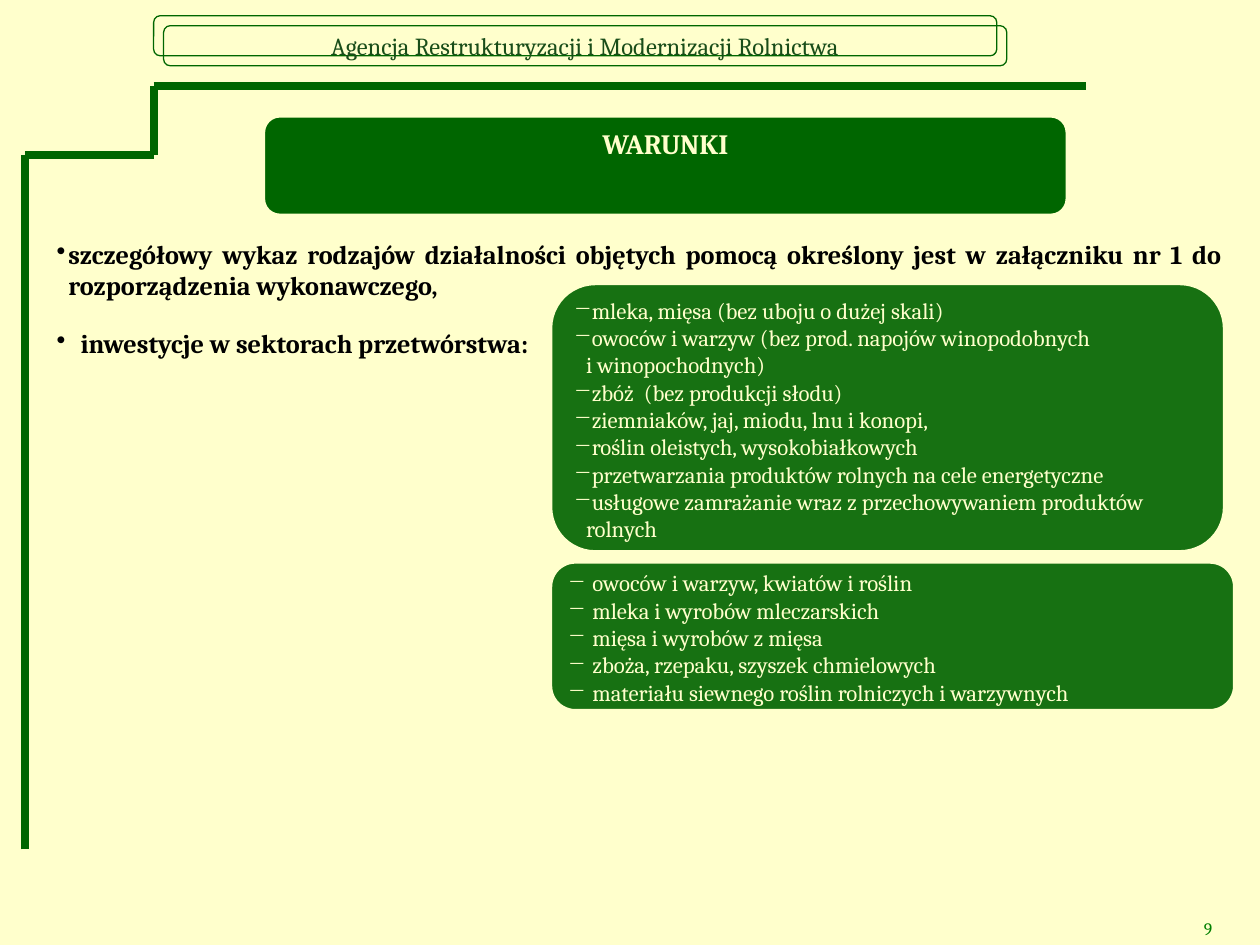
from lxml import etree
from pptx import Presentation
from pptx.dml.color import RGBColor
from pptx.enum.shapes import MSO_CONNECTOR as CONN, MSO_SHAPE as SHAPE
from pptx.enum.text import MSO_ANCHOR as ANCHOR, PP_ALIGN as ALIGN
from pptx.oxml.ns import qn
from pptx.util import Pt

GREEN, CREAM = "006600", "FFFFCC"


def rgb(value):
    return RGBColor.from_string(value)


def add_text(p, text, size, color, bold=False, align=ALIGN.LEFT, bullet=None, margin=0, hang=0):
    """Fill a paragraph; margin and hang (the bullet's outdent) are in points."""
    p.alignment = align
    pPr = p._p.get_or_add_pPr()
    pPr.set("marL", str(Pt(margin)))
    pPr.set("indent", str(Pt(-hang)))
    if bullet:
        etree.SubElement(pPr, qn("a:buChar")).set("char", bullet)
    for i, line in enumerate(text.split("\n")):
        if i:
            p.add_line_break()
        r = p.add_run()
        r.text = line
        r.font.name, r.font.size, r.font.bold = "Cambria", Pt(size), bold
        r.font.color.rgb = rgb(color)


prs = Presentation()
prs.slide_width, prs.slide_height = Pt(720), Pt(540)
s = prs.slides.add_slide(prs.slide_layouts[6])
s.background.fill.solid()
s.background.fill.fore_color.rgb = rgb(CREAM)

# Stepped frame line
frame = [(14.4, 485.3), (14.4, 88.6), (87.8, 88.6), (87.8, 49), (620.6, 49)]
for start, end in zip(frame, frame[1:]):
    line = s.shapes.add_connector(CONN.STRAIGHT, *map(Pt, start + end))
    line.line.color.rgb = rgb(GREEN)
    line.line.width = Pt(4.5)
    etree.SubElement(line._element.spPr, qn("a:effectLst"))

# Header with a doubled outline
for x, y in [(87.8, 9), (93.5, 14.7)]:
    sp = s.shapes.add_shape(SHAPE.ROUNDED_RECTANGLE, Pt(x), Pt(y), Pt(481.8), Pt(22.9))
    sp.shadow.inherit = False
    sp.fill.background()
    sp.line.color.rgb = rgb(GREEN)
    sp.line.width = Pt(0.75)
tf = sp.text_frame
tf.word_wrap = False
tf.vertical_anchor = ANCHOR.MIDDLE
add_text(tf.paragraphs[0], "Agencja Restrukturyzacji i Modernizacji Rolnictwa", 14, "194D19",
         align=ALIGN.CENTER)

# Conditions
tf = s.shapes.add_textbox(Pt(25.2), Pt(111), Pt(680.4), Pt(279)).text_frame
tf.word_wrap = True
tf.margin_top, tf.margin_bottom = Pt(25), 0
conditions = [
    ("szczegółowy wykaz rodzajów działalności objętych pomocą określony jest "
     "w załączniku nr 1 do rozporządzenia wykonawczego,", 6.75),
    ("inwestycje w sektorach przetwórstwa:", 13.75),
]
for i, (text, indent) in enumerate(conditions):
    p = tf.add_paragraph() if i else tf.paragraphs[0]
    add_text(p, text, 15, "000000", True, ALIGN.JUSTIFY, "•", indent, indent)
tf.paragraphs[0].space_after = Pt(3)
tf.paragraphs[1].space_before = Pt(12)

# Sector panels: top, width, height, text indent, items
panels = [
    (162, 385.2, 153.4, 7, [
        "mleka, mięsa (bez uboju o dużej skali)",
        "owoców i warzyw (bez prod. napojów winopodobnych\ni winopochodnych)",
        "zbóż  (bez produkcji słodu)",
        "ziemniaków, jaj, miodu, lnu i konopi,",
        "roślin oleistych, wysokobiałkowych",
        "przetwarzania produktów rolnych na cele energetyczne",
        "usługowe zamrażanie wraz z przechowywaniem produktów\nrolnych",
    ]),
    (321.1, 391, 85, 14, [
        "owoców i warzyw, kwiatów i roślin",
        "mleka i wyrobów mleczarskich",
        "mięsa i wyrobów z mięsa",
        "zboża, rzepaku, szyszek chmielowych",
        "materiału siewnego roślin rolniczych i warzywnych",
    ]),
]
for top, width, height, indent, items in panels:
    sp = s.shapes.add_shape(SHAPE.ROUNDED_RECTANGLE, Pt(314.6), Pt(top), Pt(width), Pt(height))
    sp.shadow.inherit = False
    sp.fill.solid()
    sp.fill.fore_color.rgb = rgb("006400")
    color = sp._element.spPr.find(qn("a:solidFill"))[0]
    etree.SubElement(color, qn("a:alpha")).set("val", "91000")
    sp.line.color.rgb = rgb(CREAM)
    sp.line.width = Pt(2)
    tf = sp.text_frame
    tf.word_wrap = True
    tf.vertical_anchor = ANCHOR.TOP
    tf.margin_left = Pt(5.8)
    tf.margin_top = tf.margin_right = tf.margin_bottom = 0
    for i, item in enumerate(items):
        p = tf.add_paragraph() if i else tf.paragraphs[0]
        add_text(p, item, 13, CREAM, bullet="−", margin=indent, hang=indent)

# Slide number
tf = s.shapes.add_textbox(Pt(490.3), Pt(521.3), Pt(209.5), Pt(20.9)).text_frame
tf.word_wrap = True
add_text(tf.paragraphs[0], "9", 10, "008000", align=ALIGN.RIGHT)

# Title
sp = s.shapes.add_shape(SHAPE.ROUNDED_RECTANGLE, Pt(150.5), Pt(66.2), Pt(459.4), Pt(56.9))
sp.shadow.inherit = False
sp.fill.solid()
sp.fill.fore_color.rgb = rgb(GREEN)
sp.line.color.rgb = rgb(CREAM)
sp.line.width = Pt(2)
tf = sp.text_frame
tf.word_wrap = True
tf.vertical_anchor = ANCHOR.TOP
add_text(tf.paragraphs[0], "WARUNKI", 16, CREAM, True, ALIGN.CENTER)

prs.save("out.pptx")
